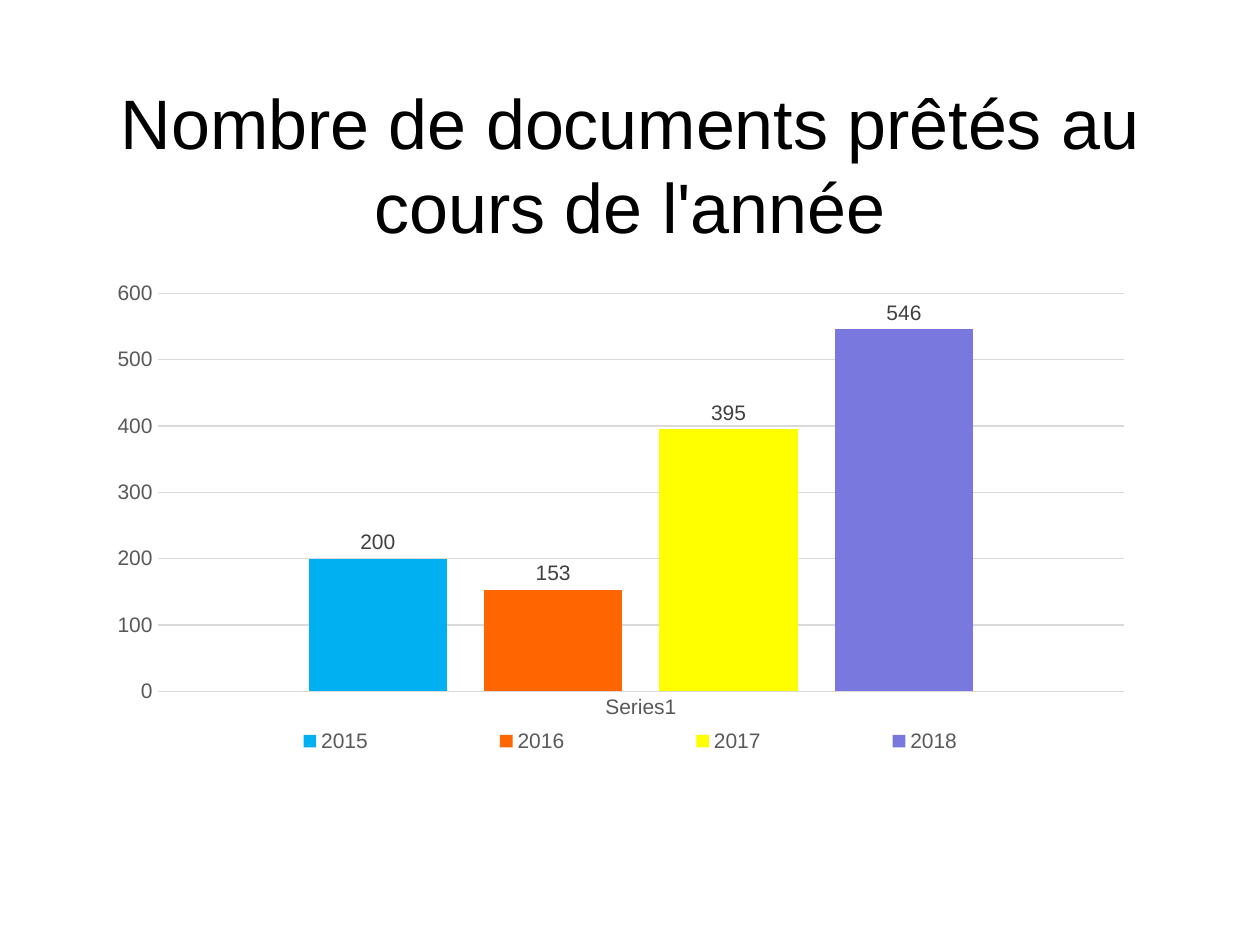
from dataclasses import dataclass

from lxml.etree import SubElement
from pptx import Presentation
from pptx.chart.data import CategoryChartData
from pptx.dml.color import RGBColor
from pptx.enum.chart import XL_CHART_TYPE as ChartType
from pptx.enum.chart import XL_LABEL_POSITION as LabelPos
from pptx.enum.chart import XL_LEGEND_POSITION as LegendPos
from pptx.enum.chart import XL_TICK_MARK as TickMark
from pptx.enum.text import MSO_ANCHOR, PP_ALIGN
from pptx.oxml.ns import qn
from pptx.util import Inches, Pt

FONT = "Arial"
AXIS_TEXT, LABEL_TEXT, GRID = "595959", "404040", "D9D9D9"


@dataclass
class YearLoans:
    year: str
    count: int
    color: str


LOANS = [
    YearLoans("2015", 200, "00B0F0"),
    YearLoans("2016", 153, "FF6600"),
    YearLoans("2017", 395, "FFFF00"),
    YearLoans("2018", 546, "7878DE"),
]


def rgb(color: str) -> RGBColor:
    return RGBColor.from_string(color)


def style_font(font, size: float, color: str) -> None:
    font.name, font.size, font.bold = FONT, Pt(size), False
    font.color.rgb = rgb(color)


def style_line(line, color: str, width: float = 0.75) -> None:
    line.color.rgb = rgb(color)
    line.width = Pt(width)


def write_text(tf, text: str, *, size: float, color: str, align=PP_ALIGN.CENTER) -> None:
    tf.word_wrap = True
    tf.vertical_anchor = MSO_ANCHOR.MIDDLE
    p = tf.paragraphs[0]
    p.alignment = align
    r = p.add_run()
    r.text = text
    style_font(r.font, size, color)


def place(element, x: float, y: float, w: float, h: float, inner: bool = False) -> None:
    """Set a chart part's manual layout, in fractions of the chart."""
    layout = element.find(qn("c:layout"))
    if layout is None:
        layout = SubElement(element, qn("c:layout"))
        # The layout follows the legend position, or opens the plot area
        pos = element.find(qn("c:legendPos"))
        element.insert(0 if pos is None else element.index(pos) + 1, layout)
    manual = SubElement(layout, qn("c:manualLayout"))
    settings = [("layoutTarget", "inner")] if inner else []
    settings += [("xMode", "edge"), ("yMode", "edge"), ("x", x), ("y", y), ("w", w), ("h", h)]
    for tag, value in settings:
        SubElement(manual, qn(f"c:{tag}")).set("val", str(value))


def add_loans_chart(slide, loans: list[YearLoans]) -> None:
    data = CategoryChartData()
    data.categories = ["Series1"]
    for loan in loans:
        data.add_series(loan.year, [loan.count])
    chart = slide.shapes.add_chart(
        ChartType.COLUMN_CLUSTERED,
        Inches(0.75), Inches(2.17), Inches(8.34), Inches(3.95), data,
    ).chart
    chart.has_title = False
    style_font(chart.font, 10, "000000")

    # Columns and their values
    plot = chart.plots[0]
    plot.gap_width, plot.overlap = 219, -27
    plot.vary_by_categories = False
    for series, loan in zip(plot.series, loans):
        series.format.fill.solid()
        series.format.fill.fore_color.rgb = rgb(loan.color)
        labels = series.data_labels
        labels.show_value = True
        labels.position = LabelPos.OUTSIDE_END
        style_font(labels.font, 12, LABEL_TEXT)

    # Axes
    for axis in (chart.category_axis, chart.value_axis):
        axis.major_tick_mark = axis.minor_tick_mark = TickMark.NONE
        style_font(axis.tick_labels.font, 12, AXIS_TEXT)
    style_line(chart.category_axis.format.line, GRID)
    values = chart.value_axis
    values.minimum_scale, values.maximum_scale, values.major_unit = 0, 600, 100
    values.format.line.fill.background()
    values.has_major_gridlines = True
    style_line(values.major_gridlines.format.line, GRID)

    # Legend and layout
    chart.has_legend = True
    legend = chart.legend
    legend.position = LegendPos.BOTTOM
    legend.include_in_layout = False
    style_font(legend.font, 12, AXIS_TEXT)
    plot_area = chart.element.find(f".//{qn('c:plotArea')}")
    legend_box = chart.element.find(f".//{qn('c:legend')}")
    place(plot_area, 0.06, 0.04, 0.92, 0.8, inner=True)
    place(legend_box, 0.08, 0.91, 0.86, 0.06)


def main() -> None:
    prs = Presentation()
    prs.slide_width, prs.slide_height = Inches(10), Inches(7.5)
    slide = prs.slides.add_slide(prs.slide_layouts[5])

    # Title
    title = slide.shapes.title
    title.left, title.top = Inches(0.75), Inches(0.67)
    title.width, title.height = Inches(8.5), Inches(1.25)
    write_text(title.text_frame, "Nombre de documents prêtés au cours de l'année",
               size=40, color="000000")

    add_loans_chart(slide, LOANS)
    prs.save("out.pptx")


if __name__ == "__main__":
    main()
